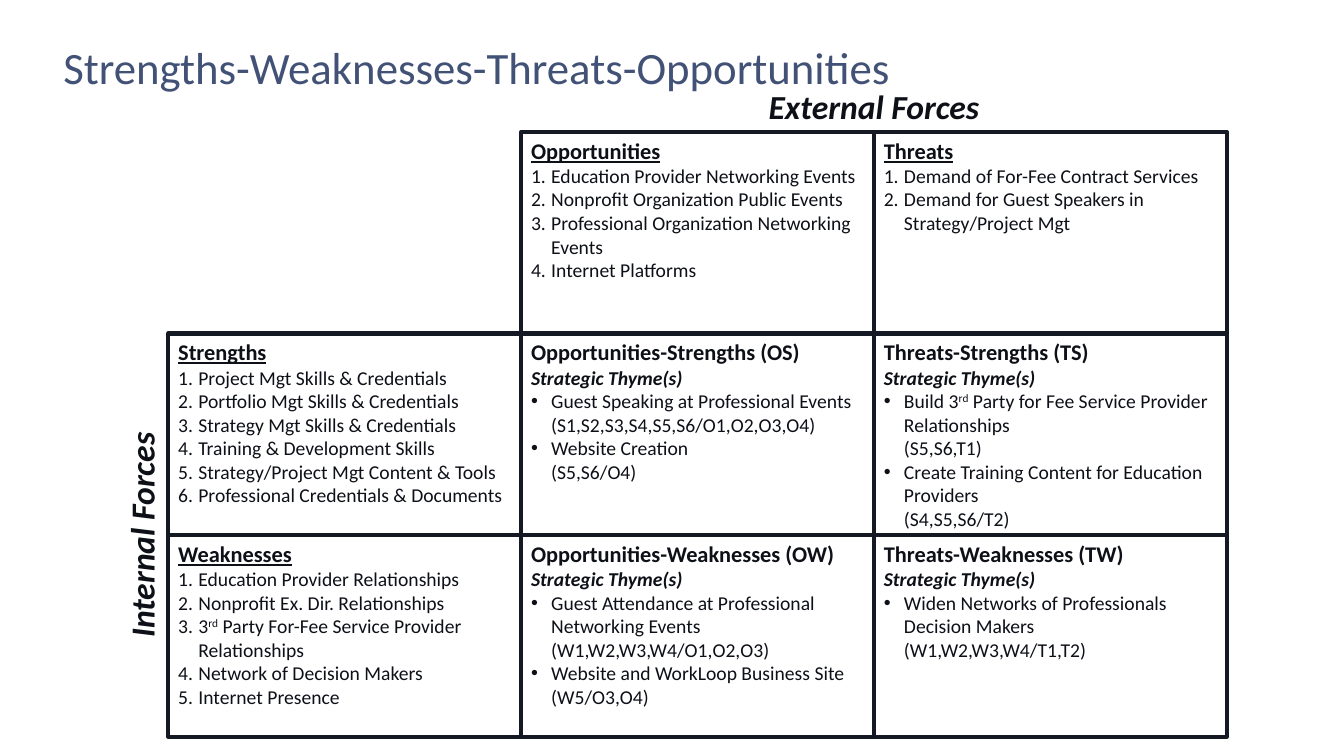
"""Build a slide with a matrix of external and internal forces."""
from dataclasses import dataclass

from lxml.etree import SubElement
from pptx import Presentation
from pptx.dml.color import RGBColor
from pptx.enum.shapes import MSO_SHAPE
from pptx.enum.text import MSO_ANCHOR, MSO_AUTO_SIZE, PP_ALIGN
from pptx.oxml.ns import qn
from pptx.util import Pt

TITLE = "Strengths-Weaknesses-Threats-Opportunities"
EXTERNAL_LABEL = "External Forces"
INTERNAL_LABEL = "Internal Forces"
STRATEGY_LABEL = "Strategic Thyme(s)"

FORCES = {
    (0, 1): ("Opportunities", [
        "Education Provider Networking Events",
        "Nonprofit Organization Public Events",
        "Professional Organization Networking Events",
        "Internet Platforms",
    ]),
    (0, 2): ("Threats", [
        "Demand of For-Fee Contract Services",
        "Demand for Guest Speakers in Strategy/Project Mgt",
    ]),
    (1, 0): ("Strengths", [
        "Project Mgt Skills & Credentials",
        "Portfolio Mgt Skills & Credentials",
        "Strategy Mgt Skills & Credentials",
        "Training & Development Skills",
        "Strategy/Project Mgt Content & Tools",
        "Professional Credentials & Documents",
    ]),
    (2, 0): ("Weaknesses", [
        "Education Provider Relationships",
        "Nonprofit Ex. Dir. Relationships",
        "3^rd^ Party For-Fee Service Provider Relationships",
        "Network of Decision Makers",
        "Internet Presence",
    ]),
}

STRATEGIES = {
    (1, 1): ("Opportunities-Strengths (OS)", [
        ("Guest Speaking at Professional Events", "(S1,S2,S3,S4,S5,S6/O1,O2,O3,O4)"),
        ("Website Creation", "(S5,S6/O4)"),
    ]),
    (1, 2): ("Threats-Strengths (TS)", [
        ("Build 3^rd^ Party for Fee Service Provider Relationships", "(S5,S6,T1)"),
        ("Create Training Content for Education Providers", "(S4,S5,S6/T2)"),
    ]),
    (2, 1): ("Opportunities-Weaknesses (OW)", [
        ("Guest Attendance at Professional Networking Events", "(W1,W2,W3,W4/O1,O2,O3)"),
        ("Website and WorkLoop Business Site", "(W5/O3,O4)"),
    ]),
    (2, 2): ("Threats-Weaknesses (TW)", [
        ("Widen Networks of Professionals Decision Makers", "(W1,W2,W3,W4/T1,T2)"),
    ]),
}


@dataclass(frozen=True)
class Theme:
    """Colours and type sizes."""
    font: str = "Calibri"
    title_color: RGBColor = RGBColor(0x42, 0x51, 0x76)
    text_color: RGBColor = RGBColor(0x0E, 0x10, 0x18)
    line_color: RGBColor = RGBColor(0x14, 0x19, 0x24)
    title_size: Pt = Pt(32)
    label_size: Pt = Pt(24)
    heading_size: Pt = Pt(16)
    body_size: Pt = Pt(14)
    line_width: Pt = Pt(3)


THEME = Theme()
GRID_LEFT, GRID_TOP = 120.25, 94.3
CELL_WIDTH, CELL_HEIGHT = 252, 144
LABEL_HEIGHT = 36
HANGING_INDENT = Pt(14.4)


def style(paragraph, size, color=THEME.text_color, **flags):
    """Set the font of a paragraph."""
    font = paragraph.font
    font.name, font.size = THEME.font, size
    font.color.rgb = color
    for name, value in flags.items():
        setattr(font, name, value)


def write(paragraph, text):
    """Add text whose parts between carets are superscript."""
    for index, part in enumerate(text.split("^")):
        run = paragraph.add_run()
        run.text = part
        if index % 2:
            run._r.get_or_add_rPr().set("baseline", "30000")


def add_item(frame, text, marker=None, **marker_settings):
    """Add an indented body line with an optional list marker."""
    paragraph = frame.add_paragraph()
    properties = paragraph._p.get_or_add_pPr()
    properties.set("marL", str(HANGING_INDENT))
    properties.set("indent", str(-HANGING_INDENT if marker else 0))
    if marker:
        SubElement(properties, qn("a:buFont"), typeface="Arial" if marker == "a:buChar" else "+mj-lt")
        SubElement(properties, qn(marker), **marker_settings)
    else:
        paragraph.level = 1
    write(paragraph, text)
    style(paragraph, THEME.body_size)


def add_cell(slide, position, heading, underline):
    """Add a matrix cell with its heading and return its text frame."""
    row, column = position
    shape = slide.shapes.add_shape(
        MSO_SHAPE.RECTANGLE, Pt(GRID_LEFT + column * CELL_WIDTH),
        Pt(GRID_TOP + row * CELL_HEIGHT), Pt(CELL_WIDTH), Pt(CELL_HEIGHT))
    shape.shadow.inherit = False
    shape.fill.background()
    shape.line.color.rgb = THEME.line_color
    shape.line.width = THEME.line_width
    frame = shape.text_frame
    frame.word_wrap = True
    frame.vertical_anchor = MSO_ANCHOR.TOP
    paragraph = frame.paragraphs[0]
    paragraph.text = heading
    style(paragraph, THEME.heading_size, bold=True, underline=underline)
    for_left_text(frame)
    return frame


def for_left_text(frame):
    """Make left alignment the rule for every level of a text frame."""
    levels = frame._txBody.find(qn("a:lstStyle"))
    for level in (1, 2):
        SubElement(levels, qn(f"a:lvl{level}pPr"), algn="l")
    frame.paragraphs[0].alignment = PP_ALIGN.LEFT


def add_label(slide, text, center_x, center_y, width, rotation=0):
    """Add an axis label around a centre point."""
    box = slide.shapes.add_textbox(
        Pt(center_x - width / 2), Pt(center_y - LABEL_HEIGHT / 2), Pt(width), Pt(LABEL_HEIGHT))
    box.rotation = rotation
    box.text_frame.word_wrap = True
    paragraph = box.text_frame.paragraphs[0]
    paragraph.text = text
    paragraph.alignment = PP_ALIGN.CENTER
    style(paragraph, THEME.label_size, bold=True, italic=True)


def add_title(slide):
    """Place and format the title."""
    title = slide.shapes.title
    title.left, title.top, title.width, title.height = Pt(38), Pt(23), Pt(883), Pt(47.5)
    frame = title.text_frame
    frame.text = TITLE
    frame.word_wrap = True
    frame.auto_size = MSO_AUTO_SIZE.NONE
    frame.vertical_anchor = MSO_ANCHOR.BOTTOM
    frame.paragraphs[0].alignment = PP_ALIGN.LEFT
    style(frame.paragraphs[0], THEME.title_size, THEME.title_color)


def main():
    """Build and save the presentation."""
    presentation = Presentation()
    presentation.slide_width, presentation.slide_height = Pt(960), Pt(540)
    slide = presentation.slides.add_slide(presentation.slide_layouts[5])
    add_title(slide)
    for position, (heading, items) in FORCES.items():
        frame = add_cell(slide, position, heading, True)
        for item in items:
            add_item(frame, item, "a:buAutoNum", type="arabicPeriod")
    for position, (heading, items) in STRATEGIES.items():
        frame = add_cell(slide, position, heading, False)
        paragraph = frame.add_paragraph()
        paragraph.text = STRATEGY_LABEL
        style(paragraph, THEME.body_size, bold=True, italic=True)
        for item, sources in items:
            add_item(frame, item, "a:buChar", char="•")
            add_item(frame, sources)
    add_label(slide, EXTERNAL_LABEL, GRID_LEFT + 2 * CELL_WIDTH, 76, 2 * CELL_WIDTH)
    add_label(slide, INTERNAL_LABEL, 101, GRID_TOP + 2 * CELL_HEIGHT, 2 * CELL_HEIGHT, 270)
    presentation.save("out.pptx")


if __name__ == "__main__":
    main()
